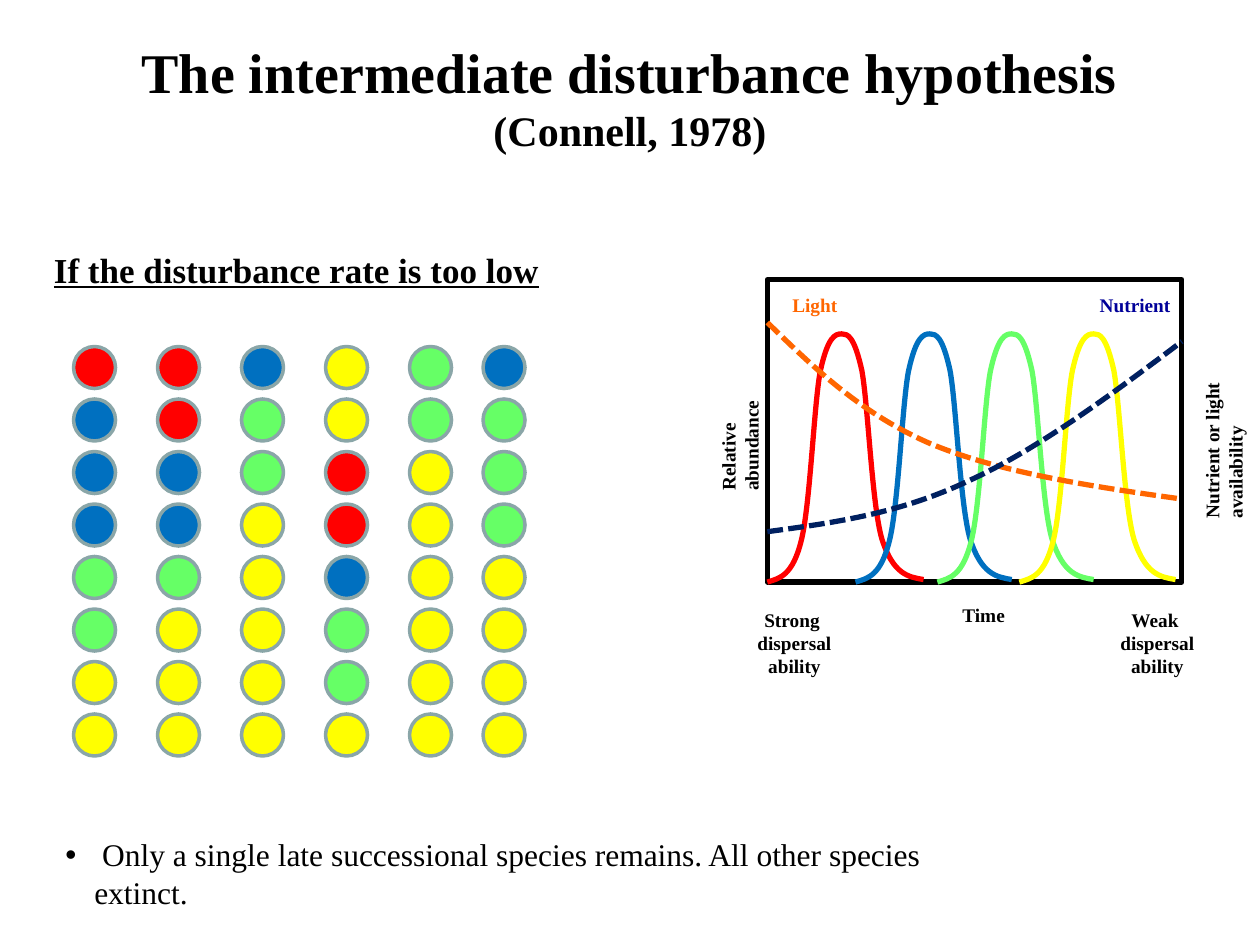
from dataclasses import dataclass
from lxml import etree
from pptx import Presentation
from pptx import util as u
from pptx.dml.color import RGBColor
from pptx.enum import dml, shapes, text
from pptx.oxml import parse_xml
from pptx.oxml.ns import nsdecls, qn


@dataclass(frozen=True)
class Theme:
    font: str = "Times New Roman"
    title: int = 32
    citation: int = 24
    heading: int = 20
    body: int = 18
    label: int = 11
    curve_width: int = 3
    ring_width: int = 2
    ink: str = "000000"
    ring: str = "8AA6A8"
    light: str = "FF6600"
    nutrient: str = "002060"
    nutrient_label: str = "000099"


THEME = Theme()
SPECIES = {"R": "FF0000", "B": "0070C0", "G": "66FF66", "Y": "FFFF00"}

# Community at each time step, top to bottom
COMMUNITIES = ["RBBBGGYY", "RRBBGYYY", "BGGYYYYY",
               "YYRRBGGY", "GGYYYYYY", "BGGGYYYY"]
COLUMN_LEFTS = [0, 2 / 3, 4 / 3, 2, 8 / 3, 3.25]
ROW_PITCH = 5 / 12
DOT_SIZE = 1 / 3

# Bezier points in inches from the plot's top left corner
HUMP = [(0, 2.4), (0.1, 2.37), (0.2, 2.35), (0.27, 2.07), (0.34, 1.79),
        (0.37, 1.0), (0.42, 0.73), (0.48, 0.45), (0.54, 0.43), (0.59, 0.43),
        (0.64, 0.43), (0.69, 0.45), (0.75, 0.72), (0.8, 0.99), (0.83, 1.79),
        (0.91, 2.06), (1.0, 2.34), (1.12, 2.36), (1.24, 2.38)]
HUMP_LEFTS = [0, 0.7, 1.35, 2]
LIGHT = [(0, 0.34), (0.37, 0.7), (0.74, 1.06), (1.29, 1.3),
         (1.84, 1.53), (2.56, 1.64), (3.28, 1.74)]
NUTRIENT = [(0, 2), (0.52, 1.93), (1.04, 1.86), (1.59, 1.6),
            (2.14, 1.35), (2.72, 0.92), (3.29, 0.49)]


def rgb(value):
    return RGBColor.from_string(value)


def add_text(parent, box, lines, size, color=THEME.ink, bold=True,
             align=text.PP_ALIGN.LEFT, wrap=False):
    label = parent.add_textbox(*map(u.Inches, box))
    frame = label.text_frame
    frame.word_wrap = wrap
    frame.text = lines
    for paragraph in frame.paragraphs:
        paragraph.alignment = align
        for run in paragraph.runs:
            run.font.name = THEME.font
            run.font.size = u.Pt(size)
            run.font.bold = bold
            run.font.color.rgb = rgb(color)
    return label


def add_axis_label(parent, box, words, insets):
    """Upward-reading label; the side insets set where it wraps."""
    label = add_text(parent, box, words, THEME.label, wrap=True)
    label.rotation = 270
    frame = label.text_frame
    frame.margin_left, frame.margin_right = map(u.Inches, insets)
    frame.margin_top = u.Inches(0.02)


def style_outline(shape, color, width):
    shape.shadow.inherit = False
    shape.line.color.rgb = rgb(color)
    shape.line.width = u.Pt(width)


def add_curve(parent, left, top, points, color, dashed=False):
    start, *controls = [(u.Inches(left + x), u.Inches(top + y))
                        for x, y in points]
    builder = parent.build_freeform(*start)
    builder.add_line_segments(controls, close=False)
    curve = builder.convert_to_shape()

    # Join each three straight segments into one cubic segment
    segments = list(curve._element.iter(qn("a:lnTo")))
    for i in range(0, len(segments), 3):
        cubic = etree.SubElement(segments[i].getparent(), qn("a:cubicBezTo"))
        for segment in segments[i:i + 3]:
            cubic.append(segment[0])
            segment.getparent().remove(segment)

    curve.fill.background()
    style_outline(curve, color, THEME.curve_width)
    if dashed:
        curve.line.dash_style = dml.MSO_LINE.SQUARE_DOT


def add_title(slide, box):
    title = add_text(slide.shapes, box,
                     "The intermediate disturbance hypothesis\n(Connell, 1978)",
                     THEME.title, align=text.PP_ALIGN.CENTER, wrap=True)
    citation = title.text_frame.paragraphs[1]
    citation.runs[0].font.size = u.Pt(THEME.citation)


def add_succession_plot(slide, box):
    left, top, width, height = box
    plot = slide.shapes.add_group_shape().shapes

    frame = plot.add_shape(shapes.MSO_SHAPE.RECTANGLE, *map(u.Inches, box))
    frame.fill.background()
    style_outline(frame, THEME.ink, THEME.curve_width)

    # Species peaks, then the two resource curves
    for offset, color in zip(HUMP_LEFTS, SPECIES.values()):
        add_curve(plot, left + offset, top, HUMP, color)
    add_curve(plot, left, top, LIGHT, THEME.light, dashed=True)
    add_curve(plot, left, top, NUTRIENT, THEME.nutrient, dashed=True)

    # Labels of axes and curves
    add_text(plot, (left + 1.45, top + 2.52, 0.54, 0.29), "Time", THEME.label)
    add_axis_label(plot, (left - 1.03, top + 1.03, 1.5, 0.29),
                   "Relative abundance", (0.25, 0.45))
    add_axis_label(plot, (left + 2.53, top + 1.03, 2.06, 0.29),
                   "Nutrient or light availability", (0.31, 0.6))
    for words, x, label_width, color in [
            ("Nutrient", 2.54, 0.77, THEME.nutrient_label),
            ("Light", 0.1, 0.56, THEME.light)]:
        add_text(plot, (left + x, top + 0.06, label_width, 0.29), words,
                 THEME.label, color)

    # Dispersal ability at both ends of the time axis
    for strength, x in [("Weak", width - 0.59), ("Strong", -0.18)]:
        add_text(slide.shapes, (left + x, top + height + 0.16, 0.79, 0.66),
                 f"{strength} \ndispersal\nability", THEME.label,
                 align=text.PP_ALIGN.CENTER)


def add_heading(slide, box):
    heading = add_text(slide.shapes, box, "If the disturbance rate is too low",
                       THEME.heading, wrap=True)
    heading.text_frame.paragraphs[0].runs[0].font.underline = True


def add_communities(slide, left, top):
    for column_left, community in zip(COLUMN_LEFTS, COMMUNITIES):
        for row, species in enumerate(community):
            dot = slide.shapes.add_shape(
                shapes.MSO_SHAPE.OVAL, u.Inches(left + column_left),
                u.Inches(top + row * ROW_PITCH),
                u.Inches(DOT_SIZE), u.Inches(DOT_SIZE))
            dot.fill.solid()
            dot.fill.fore_color.rgb = rgb(SPECIES[species])
            style_outline(dot, THEME.ring, THEME.ring_width)


def add_conclusion(slide, box):
    conclusion = add_text(
        slide.shapes, box,
        " Only a single late successional species remains. "
        "All other species extinct.", THEME.body, bold=False, wrap=True)
    properties = conclusion.text_frame.paragraphs[0]._p.get_or_add_pPr()
    hanging = u.Inches(0.23)
    properties.set("marL", str(hanging))
    properties.set("indent", str(-hanging))
    properties.append(parse_xml(f'<a:buFont {nsdecls("a")} typeface="Arial"/>'))
    properties.append(parse_xml(f'<a:buChar {nsdecls("a")} char="•"/>'))


def main():
    deck = Presentation()
    deck.slide_width, deck.slide_height = u.Inches(10), u.Inches(7.5)
    slide = deck.slides.add_slide(deck.slide_layouts[6])
    add_title(slide, (0, 0.25, 10, 1.04))
    add_succession_plot(slide, (6.09, 2.22, 3.29, 2.4))
    add_heading(slide, (0.33, 1.92, 4.83, 0.44))
    add_communities(slide, 7 / 12, 2.75)
    add_conclusion(slide, (0.42, 6.58, 7.73, 0.4))
    deck.save("out.pptx")


if __name__ == "__main__":
    main()
